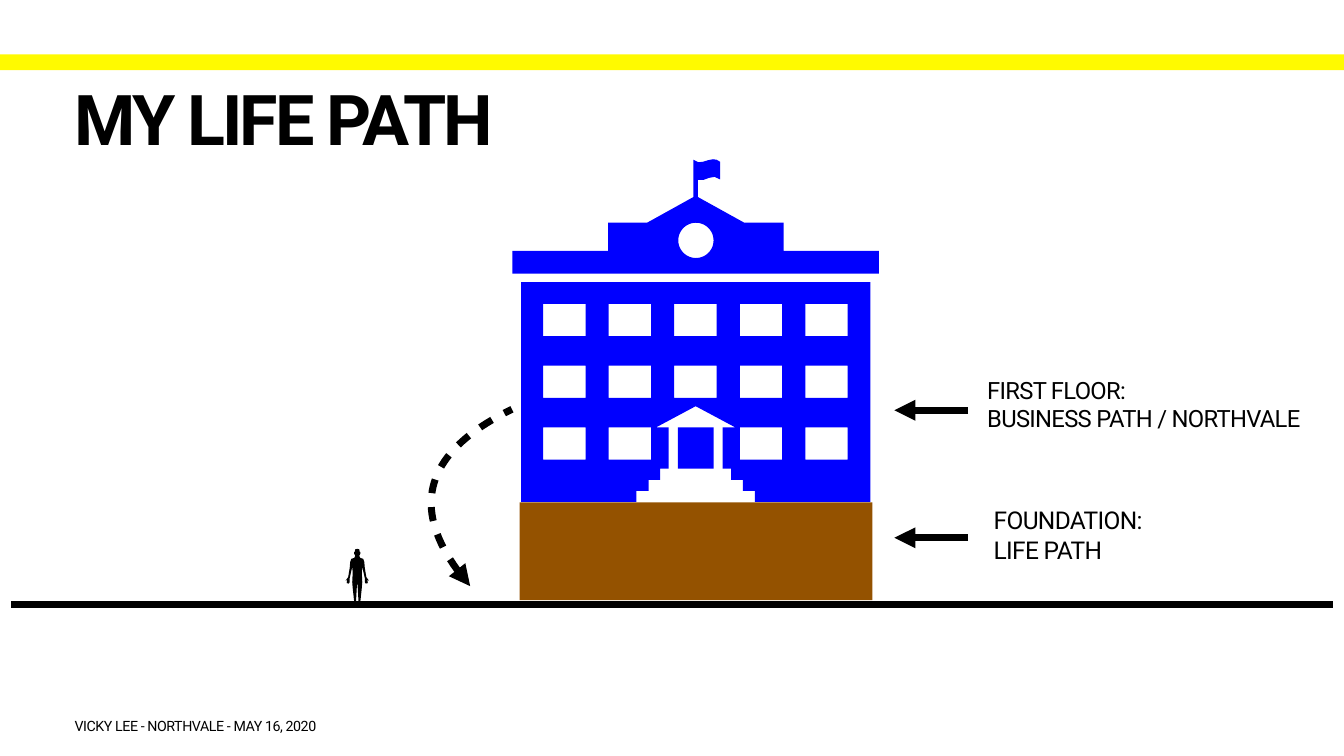
"""Build the life path slide with a building on its foundation."""
from math import cos, pi, sin

from lxml import etree
from pptx import Presentation
from pptx.dml.color import RGBColor
from pptx.enum.shapes import MSO_CONNECTOR, MSO_SHAPE
from pptx.oxml.ns import qn
from pptx.util import Inches, Pt

RECT = MSO_SHAPE.RECTANGLE
STRAIGHT = MSO_CONNECTOR.STRAIGHT
BLACK, BLUE, BROWN, YELLOW = "000000", "0000FF", "945200", "FFFA00"
rgb = RGBColor.from_string

prs = Presentation()
prs.slide_width, prs.slide_height = Inches(26.67), Inches(15)
s = prs.slides.add_slide(prs.slide_layouts[6])


def add_text(text, x, y, w, h, size, spacing, bold=False, line_spacing=None):
    tf = s.shapes.add_textbox(Inches(x), Inches(y), Inches(w), Inches(h)).text_frame
    tf.word_wrap = True
    tf.margin_left = tf.margin_right = tf.margin_top = tf.margin_bottom = Inches(0.06)
    for i, line in enumerate(text.split("\n")):
        p = tf.add_paragraph() if i else tf.paragraphs[0]
        p.line_spacing = line_spacing
        r = p.add_run()
        r.text = line
        r.font.name, r.font.size, r.font.bold = "Roboto", Pt(size), bold
        r.font.color.rgb = rgb(BLACK)
        r.font._element.set("spc", str(round(spacing * 100)))


def add_outline(contours, fill=None):
    contours = [[(Inches(x), Inches(y)) for x, y in c] for c in contours]
    builder = s.shapes.build_freeform(*contours[0][0], scale=1.0)
    for i, points in enumerate(contours):
        if i:
            builder.move_to(*points[0])
        builder.add_line_segments(points[1:], close=fill is not None)
    sp = builder.convert_to_shape()
    sp.shadow.inherit = False
    if fill:
        sp.fill.solid()
        sp.fill.fore_color.rgb = rgb(fill)
        sp.line.fill.background()
    else:
        sp.fill.background()
    return sp


for x, y, w, h, color in [(0, 1.08, 26.67, 0.31, YELLOW), (10.31, 9.97, 7, 1.94, BROWN)]:
    sp = s.shapes.add_shape(RECT, Inches(x), Inches(y), Inches(w), Inches(h))
    sp.shadow.inherit = False
    sp.fill.solid()
    sp.fill.fore_color.rgb = rgb(color)
    sp.line.fill.background()

add_text("VICKY LEE - NORTHVALE - MAY 16, 2020", 1.42, 14.17, 23.92, 0.47, 20.3, -0.6)
add_text("FIRST FLOOR:\nBUSINESS PATH / NORTHVALE", 19.53, 7.39, 6.49, 1.94, 34, -1)
add_text("MY LIFE PATH", 1.42, 1.77, 23.92, 1.94, 100, -4, bold=True, line_spacing=0.8)
add_text("FOUNDATION:\nLIFE PATH", 19.66, 9.97, 6.49, 1.94, 35, -1)

roof = [
    (14.15, 3.16), (14.05, 3.18), (13.95, 3.21), (13.86, 3.22), (13.76, 3.17),
    (13.76, 3.91), (12.84, 4.42), (12.07, 4.42), (12.07, 4.98), (10.17, 4.98),
    (10.17, 5.43), (17.44, 5.43), (17.44, 4.98), (15.55, 4.98), (15.55, 4.42),
    (14.77, 4.42), (13.85, 3.91), (13.85, 3.57), (13.96, 3.57), (14.07, 3.53),
    (14.18, 3.51), (14.29, 3.56), (14.29, 3.21), (14.22, 3.17),
]
clock = [(13.81 + 0.35 * cos(i * pi / 24), 4.77 + 0.35 * sin(i * pi / 24)) for i in range(48)]
center = 13.805
half_walls = [
    (10.34, 5.6), (10.34, 9.96), (12.63, 9.96), (12.63, 9.74), (12.87, 9.74),
    (12.87, 9.52), (13.1, 9.52), (13.1, 9.3), (13.27, 9.3), (13.27, 8.48),
    (13.02, 8.48), (center, 8.06),
]
walls = half_walls + [(2 * center - x, y) for x, y in half_walls[-2::-1]]
openings = [(13.45, 8.48, 0.71, 0.82)]
for row in range(3):
    for col in range(5):
        if (row, col) != (2, 2):
            openings.append((10.78 + 1.3 * col, 6.03 + 1.225 * row, 0.84, 0.64))
panes = [[(x, y), (x + w, y), (x + w, y + h), (x, y + h)] for x, y, w, h in openings]
add_outline([roof, clock, walls, *panes], BLUE)

axis = 7.09
half_person = [
    (axis, 10.89), (7.05, 10.9), (7.04, 10.95), (7.03, 10.95), (7.03, 10.99),
    (7.05, 11.03), (7.03, 11.07), (6.97, 11.09), (6.95, 11.15), (6.94, 11.27),
    (6.91, 11.45), (6.86, 11.52), (6.89, 11.51), (6.88, 11.57), (6.92, 11.58),
    (6.94, 11.55), (6.94, 11.47), (6.99, 11.25), (7, 11.36), (6.99, 11.55),
    (7, 11.67), (7.03, 11.95), (6.98, 12.05), (7.05, 12.04), (7.07, 12),
    (7.07, 11.85), (7.08, 11.67), (axis, 11.53),
]
person = half_person + [(2 * axis - x, y) for x, y in half_person[-2:0:-1]]
add_outline([person], BLACK)

curve = []
for i in range(41):
    t = i / 40
    weights = [(1 - t) ** 3, 3 * t * (1 - t) ** 2, 3 * t ** 2 * (1 - t), t ** 3]
    curve.append((sum(k * x for k, x in zip(weights, (9.33, 8.07, 8.35, 10.16))),
                  sum(k * y for k, y in zip(weights, (11.63, 10.17, 9, 8.12)))))
lines = [(add_outline([curve]), "headEnd")]
for x1, x2, y, arrow in [(0.22, 26.45, 12, None), (19.21, 17.75, 8.14, "tailEnd"),
                         (19.21, 17.75, 10.67, "tailEnd")]:
    sp = s.shapes.add_connector(STRAIGHT, Inches(x1), Inches(y), Inches(x2), Inches(y))
    etree.SubElement(sp.element.spPr, qn("a:effectLst"))
    lines.append((sp, arrow))

for sp, arrow in lines:
    sp.line.width = Pt(10)
    sp.line.fill.solid()
    sp.line.fill.fore_color.rgb = rgb(BLACK)
    ln = sp.element.spPr.find(qn("a:ln"))
    if arrow == "headEnd":
        dash = etree.SubElement(ln, qn("a:custDash"))
        etree.SubElement(dash, qn("a:ds"), d="200000", sp="200000")
    if arrow:
        etree.SubElement(ln, qn(f"a:{arrow}"), type="triangle")

prs.save("out.pptx")
